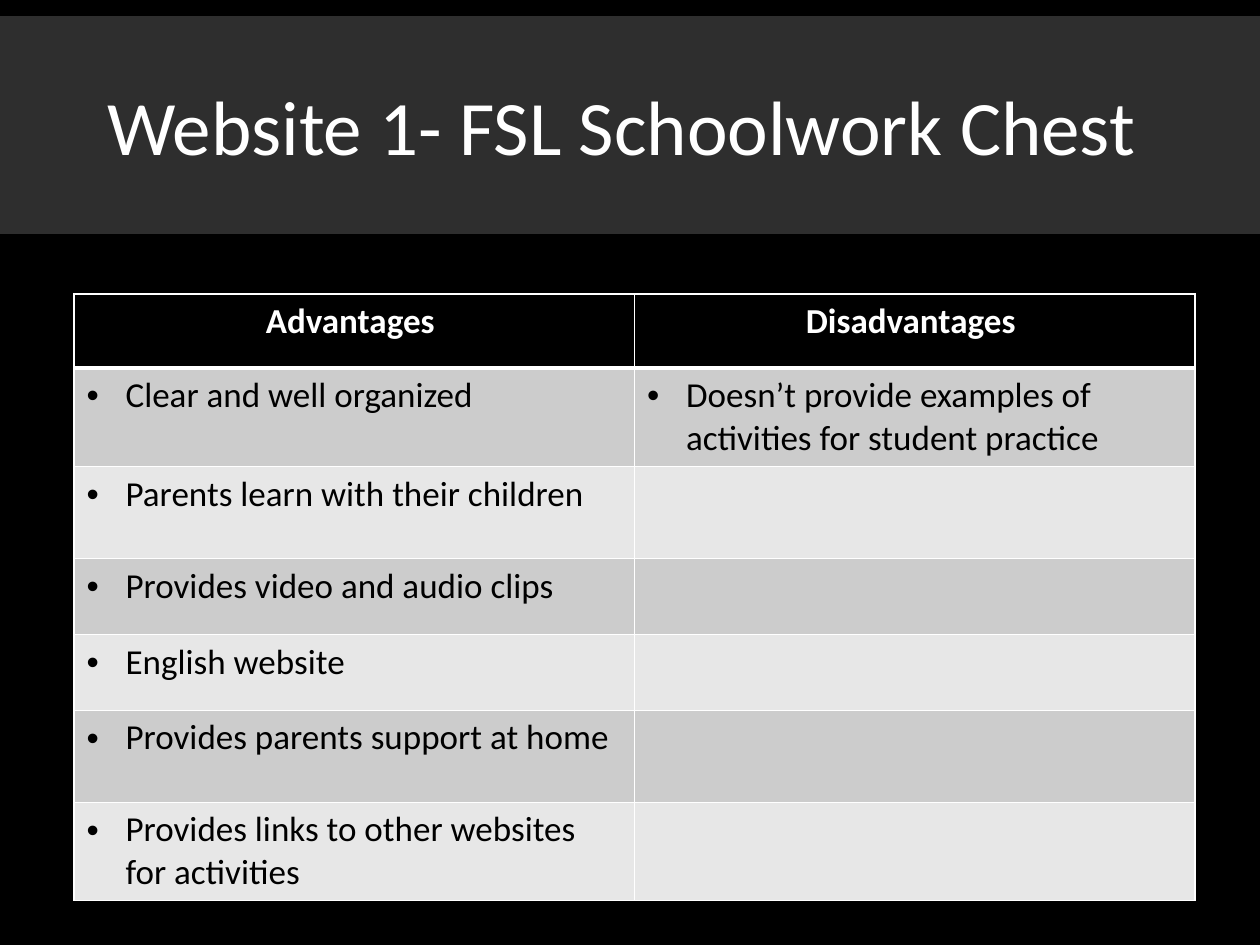
from lxml import etree
from pptx import Presentation
from pptx.dml.color import RGBColor
from pptx.enum.text import MSO_ANCHOR, MSO_AUTO_SIZE, PP_ALIGN
from pptx.oxml.ns import qn
from pptx.util import Pt

CENTER, LEFT = PP_ALIGN.CENTER, PP_ALIGN.LEFT
MIDDLE, NO_FIT = MSO_ANCHOR.MIDDLE, MSO_AUTO_SIZE.NONE
TITLE_ONLY = 5
FONT = "Calibri"
COLORS = {
    "black": "000000",
    "white": "FFFFFF",
    "band": "808080",
    "odd_row": "CCCCCC",
    "even_row": "E7E7E7",
}
BULLET_INDENT = 39
HEADINGS = ("Advantages ", "Disadvantages ")
POINTS = [
    ("Clear and well organized",
     "Doesn’t provide examples of activities for student practice"),
    ("Parents learn with their children", ""),
    ("Provides video and audio clips", ""),
    ("English website", ""),
    ("Provides parents support at home", ""),
    ("Provides links to other websites for activities", ""),
]
ROW_HEIGHTS = (74, 92, 92, 76, 76, 92, 92)


def px(length):
    return round(length * 914400 / 126)


def rgb(name):
    return RGBColor.from_string(COLORS[name])


def write(frame, text, size=20, color="black", bold=False, align=LEFT, bullet=False):
    frame.word_wrap = True
    paragraph = frame.paragraphs[0]
    paragraph.text = text
    paragraph.alignment = align
    if bullet:
        properties = paragraph._p.get_or_add_pPr()
        properties.set("marL", str(px(BULLET_INDENT)))
        properties.set("indent", str(-px(BULLET_INDENT)))
        etree.SubElement(properties, qn("a:buFont"), typeface="Arial")
        etree.SubElement(properties, qn("a:buChar"), char="•")
    font = paragraph.font
    font.name, font.size, font.bold = FONT, Pt(size), bold
    font.color.rgb = rgb(color)


def add_borders(cell, top, bottom):
    properties = cell._tc.get_or_add_tcPr()
    # Border lines come before the fill in a cell's properties
    widths = {"a:lnL": 1, "a:lnR": 1, "a:lnT": top, "a:lnB": bottom}
    for position, (side, width) in enumerate(widths.items()):
        line = etree.Element(qn(side), w=str(Pt(width)))
        fill = etree.SubElement(line, qn("a:solidFill"))
        etree.SubElement(fill, qn("a:srgbClr"), val=COLORS["white"])
        properties.insert(position, line)


def place_title(slide, left, top, width, height):
    title = slide.shapes.title
    title.left, title.top = px(left), px(top)
    title.width, title.height = px(width), px(height)
    # Translucent band behind the heading
    title.fill.solid()
    title.fill.fore_color.rgb = rgb("band")
    band_color = title.fill._xPr.find(".//" + qn("a:srgbClr"))
    etree.SubElement(band_color, qn("a:alpha"), val="36000")
    title.text_frame.auto_size = NO_FIT
    title.text_frame.vertical_anchor = MIDDLE
    write(title.text_frame, "Website 1- FSL Schoolwork Chest ",
          size=44, color="white", align=CENTER)


def add_comparison(slide, left, top, width):
    rows = [HEADINGS, *POINTS]
    table = slide.shapes.add_table(
        len(rows), len(HEADINGS), px(left), px(top), px(width), px(sum(ROW_HEIGHTS))
    ).table
    table.horz_banding = False
    for column in table.columns:
        column.width = px(width / len(HEADINGS))
    for r, (texts, height) in enumerate(zip(rows, ROW_HEIGHTS)):
        table.rows[r].height = px(height)
        heading = r == 0
        shade = "black" if heading else "odd_row" if r % 2 else "even_row"
        for c, text in enumerate(texts):
            cell = table.cell(r, c)
            cell.fill.solid()
            cell.fill.fore_color.rgb = rgb(shade)
            # Thick rule between the headings and the points
            add_borders(cell, top=3 if r == 1 else 1, bottom=3 if heading else 1)
            if heading:
                write(cell.text_frame, text, color="white", bold=True, align=CENTER)
            elif text:
                write(cell.text_frame, text, bullet=True)


def main():
    deck = Presentation()
    deck.slide_width, deck.slide_height = px(1260), px(945)
    slide = deck.slides.add_slide(deck.slide_layouts[TITLE_ONLY])
    slide.background.fill.solid()
    slide.background.fill.fore_color.rgb = rgb("black")
    place_title(slide, 0, 16, 1261, 218)
    add_comparison(slide, 74, 294, 1121)
    deck.save("out.pptx")


if __name__ == "__main__":
    main()
